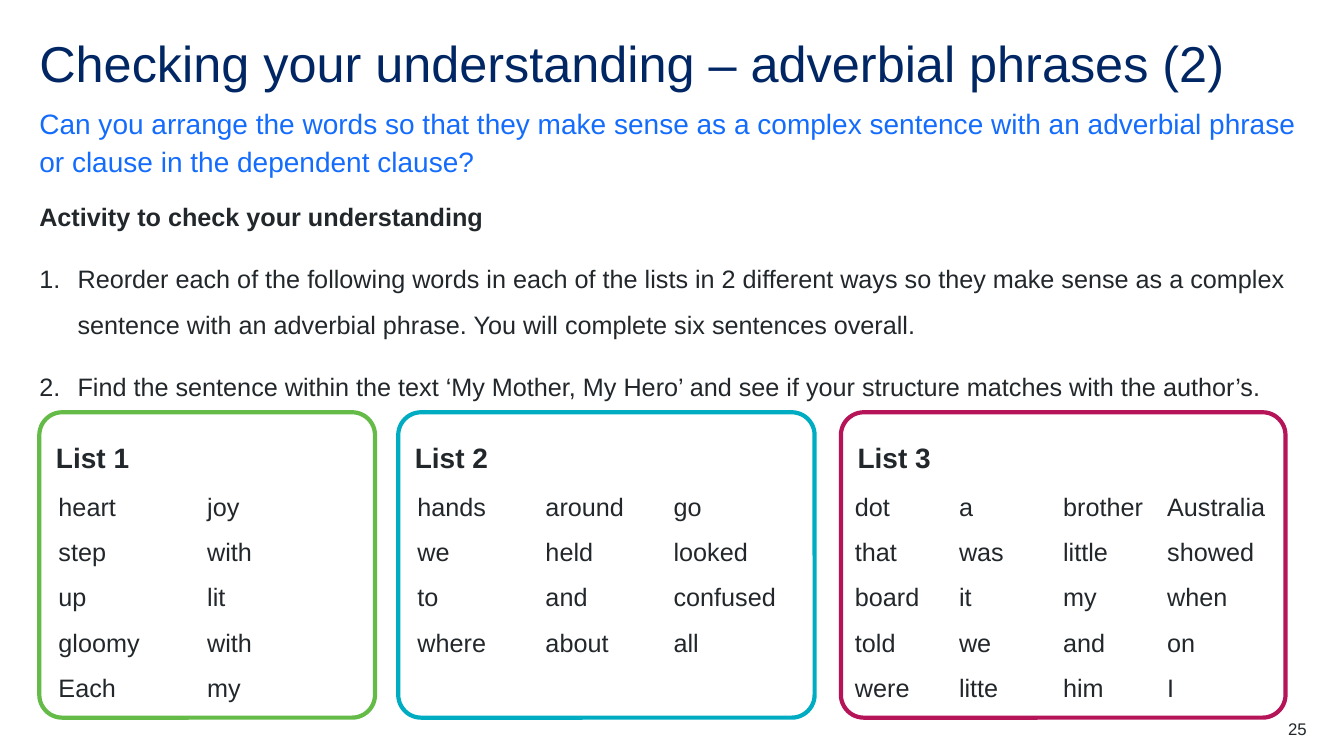
from pptx import Presentation
from pptx.dml.color import RGBColor
from pptx.enum.shapes import MSO_SHAPE as Shape
from pptx.enum.text import MSO_ANCHOR as Anchor, PP_ALIGN as Align
from pptx.oxml.ns import qn
from pptx.util import Pt
from lxml.etree import SubElement

EMU_PER_PX = 9144
COLORS = {
    "navy": "002664",
    "blue": "146CFD",
    "ink": "22272B",
    "white": "FFFFFF",
    "green": "64BB47",
    "teal": "00ACC2",
    "crimson": "B51458",
}
WORD_LISTS = [
    ("List 1", "green", (39, 333), (58, 295, 241),
     ["heart step up gloomy Each", "joy with lit with my"]),
    ("List 2", "teal", (395, 413), (414, 381, 186),
     ["hands we to where", "around held and about", "go looked confused all"]),
    ("List 3", "crimson", (834, 441), (848, 413, 232),
     ["dot that board told were", "a was it we litte",
      "brother little my and him", "Australia showed when on I"]),
]


def px(value):
    return value * EMU_PER_PX


def rgb(name):
    return RGBColor.from_string(COLORS[name])


class LessonSlide:
    font = "Arial"

    def __init__(self, deck):
        self.slide = deck.slides.add_slide(deck.slide_layouts[6])

    def set_text(self, shape, lines, size, color="ink", bold=False, spacing=1.0,
                 after=0, align=Align.LEFT, anchor=Anchor.TOP, inset=0):
        frame = shape.text_frame
        frame.word_wrap = True
        frame.vertical_anchor = anchor
        frame.margin_left = frame.margin_right = px(inset)
        frame.margin_top = frame.margin_bottom = px(inset // 2)
        frame.text = "\n".join(lines)
        for paragraph in frame.paragraphs:
            paragraph.alignment = align
            paragraph.line_spacing = spacing
            paragraph.space_after = Pt(after)
            for run in paragraph.runs:
                run.font.name = self.font
                run.font.size = Pt(size)
                run.font.bold = bold
                run.font.color.rgb = rgb(color)

    def text(self, box, lines, size, **style):
        shape = self.slide.shapes.add_textbox(*map(px, box))
        self.set_text(shape, lines, size, **style)
        return shape

    def instructions(self, box, heading, steps):
        shape = self.text(box, [heading, *steps], 18, spacing=1.5, after=12)
        shape.fill.solid()
        shape.fill.fore_color.rgb = rgb("white")
        first, *numbered = shape.text_frame.paragraphs
        first.runs[0].font.bold = True
        for paragraph in numbered:
            properties = paragraph._p.get_or_add_pPr()
            properties.set("marL", str(px(38)))
            properties.set("indent", str(px(-38)))
            SubElement(properties, qn("a:buFont")).set("typeface", self.font)
            SubElement(properties, qn("a:buAutoNum")).set("type", "arabicPeriod")

    def card(self, box, heading, color):
        shape = self.slide.shapes.add_shape(Shape.ROUNDED_RECTANGLE, *map(px, box))
        shape.adjustments[0] = 0.075
        shape.shadow.inherit = False
        shape.fill.background()
        shape.line.color.rgb = rgb(color)
        shape.line.width = Pt(3)
        self.set_text(shape, [heading], 20, bold=True, spacing=1.5, inset=10)

    def word_columns(self, box, columns):
        words = [word for column in columns for word in column.split()]
        shape = self.text(box, words, 18, spacing=1.5)
        body = next(shape.element.iter(qn("a:bodyPr")))
        body.set("numCol", str(len(columns)))
        body.set("spcCol", "0")


def main():
    deck = Presentation()
    deck.slide_width, deck.slide_height = px(1333), px(750)
    lesson = LessonSlide(deck)

    lesson.text((39, 39, 1256, 60),
                ["Checking your understanding – adverbial phrases (2)"],
                36, color="navy", spacing=0.9)
    lesson.text((39, 112, 1256, 65),
                ["Can you arrange the words so that they make sense as a complex "
                 "sentence with an adverbial phrase or clause in the dependent clause?"],
                20, color="blue", spacing=1.14, after=12, anchor=Anchor.BOTTOM)
    lesson.instructions(
        (39, 185, 1256, 215),
        "Activity to check your understanding",
        ["Reorder each of the following words in each of the lists in 2 different ways "
         "so they make sense as a complex sentence with an adverbial phrase. "
         "You will complete six sentences overall.",
         "Find the sentence within the text ‘My Mother, My Hero’ and see if your "
         "structure matches with the author’s."])

    for heading, color, (left, width), (words_left, words_width, words_height), columns in WORD_LISTS:
        lesson.card((left, 409, width, 303), heading, color)
        lesson.word_columns((words_left, 472, words_width, words_height), columns)

    lesson.text((1217, 713, 79, 20), ["25"], 12, align=Align.RIGHT)
    deck.save("out.pptx")


if __name__ == "__main__":
    main()
